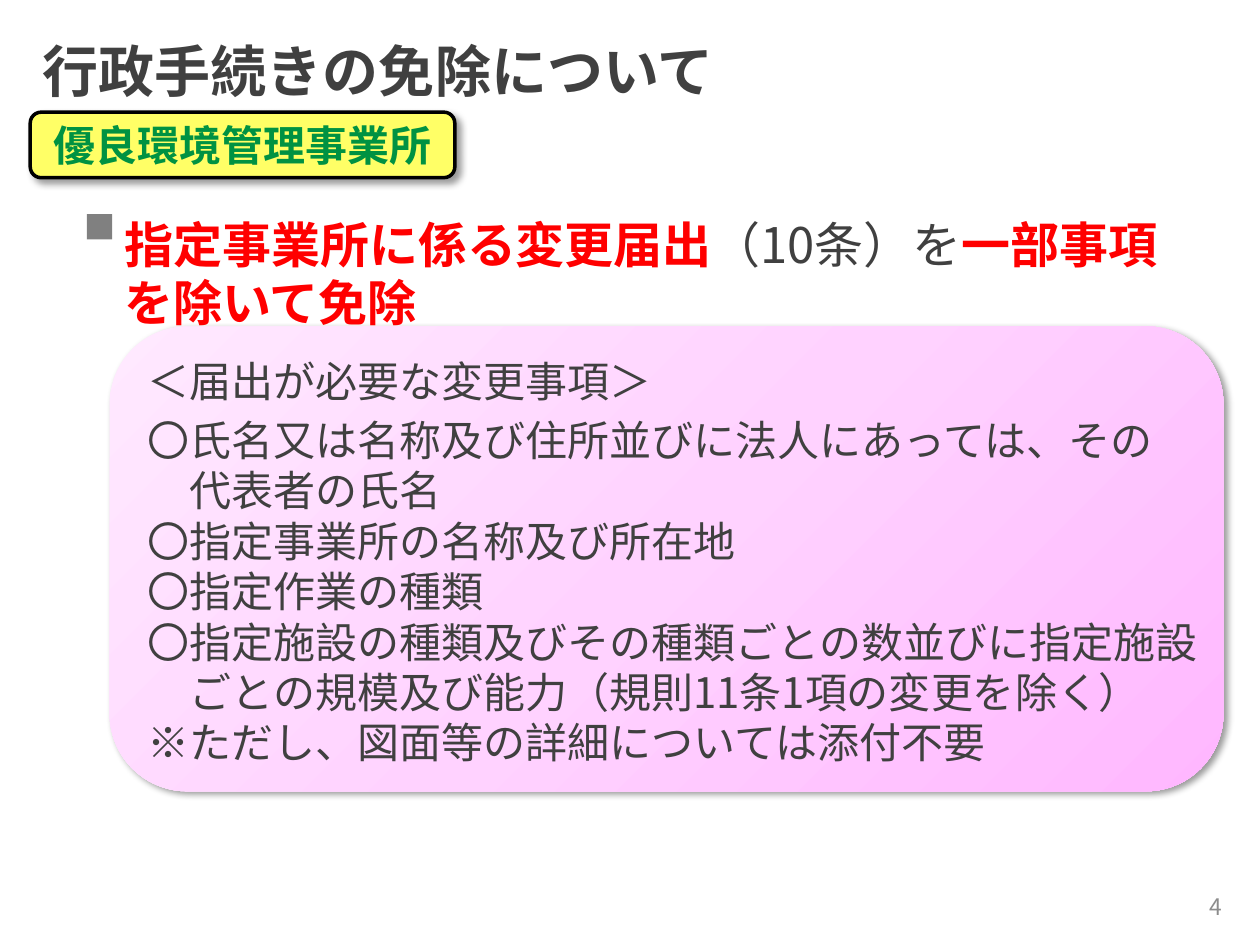
from pptx import Presentation
from pptx import util as u
from pptx.dml.color import RGBColor
from pptx.enum import shapes, text
from pptx.oxml import parse_xml
from pptx.oxml.ns import nsdecls, qn

FACE = "Noto Sans CJK JP"
HUE = {"ink": "404040", "red": "FF0000", "green": "009242", "gray": "808080",
       "pale": "8C8C8C", "gold": "FFFF66", "black": "000000"}
GRAD = [(0, "FFB7FF"), (50, "FFD2FF"), (100, "FFE9FF")]
LEAD = 1.2  # line pitch as a share of the type size
HANG = u.Pt(24)  # one full-width character

NEEDS = [  # (line, carries on from the line above)
    ("〇氏名又は名称及び住所並びに法人にあっては、その", False),
    ("代表者の氏名", True),
    ("〇指定事業所の名称及び所在地", False),
    ("〇指定作業の種類", False),
    ("〇指定施設の種類及びその種類ごとの数並びに指定施設", False),
    ("ごとの規模及び能力（規則11条1項の変更を除く）", True),
    ("※ただし、図面等の詳細については添付不要", False),
]


def rgb(name):
    return RGBColor.from_string(HUE[name])


def place(shape, box):
    for key, val in zip(("left", "top", "width", "height"), box):
        setattr(shape, key, u.Inches(val))


def frame(shape, anchor=text.MSO_ANCHOR.TOP):
    tf = shape.text_frame
    look = {"word_wrap": True, "auto_size": text.MSO_AUTO_SIZE.NONE,
            "vertical_anchor": anchor,
            "margin_left": u.Inches(0.1), "margin_right": u.Inches(0.1),
            "margin_top": u.Inches(0.05), "margin_bottom": u.Inches(0.05)}
    for key, val in look.items():
        setattr(tf, key, val)
    return tf


def write(para, runs, size, align=text.PP_ALIGN.LEFT):
    """Fill a paragraph with (words, colour, bold) runs."""
    look = {"alignment": align, "line_spacing": u.Pt(round(size * LEAD, 1)),
            "space_before": u.Pt(0), "space_after": u.Pt(0)}
    for key, val in look.items():
        setattr(para, key, val)
    for words, hue, bold in runs:
        run = para.add_run()
        run.text = words
        for key, val in {"size": u.Pt(size), "bold": bold, "name": FACE}.items():
            setattr(run.font, key, val)
        run.font.color.rgb = rgb(hue)
        latin = run.font._element.find(qn("a:latin"))
        latin.addnext(parse_xml(f'<a:ea {nsdecls("a")} typeface="{FACE}"/>'))


def label(slide, box, runs, size, **more):
    shape = slide.shapes.add_textbox(0, 0, 0, 0)
    place(shape, box)
    write(frame(shape).paragraphs[0], runs, size, **more)


def block(slide, kind, box, fill, edge=None, shade=False):
    shape = slide.shapes.add_shape(kind, 0, 0, 0, 0)
    place(shape, box)
    shape.fill.solid()
    shape.fill.fore_color.rgb = rgb(fill)
    if edge:
        shape.line.color.rgb = rgb(edge)
        shape.line.width = u.Pt(2)
    else:
        shape.line.fill.background()
    shape.shadow.inherit = False
    if shade:
        shape._element.spPr.find(qn("a:effectLst")).append(parse_xml(
            f'<a:outerShdw {nsdecls("a")} blurRad="{u.Pt(4)}" dist="{u.Pt(3)}" '
            'dir="2700000" algn="tl" rotWithShape="0"><a:srgbClr val="000000">'
            '<a:alpha val="40000"/></a:srgbClr></a:outerShdw>'))
    return shape


def head(slide, box):
    shape = slide.shapes.title
    place(shape, box)
    write(frame(shape).paragraphs[0], [("行政手続きの免除について", "ink", True)], 32)


def badge(slide, box):
    shape = block(slide, shapes.MSO_SHAPE.ROUNDED_RECTANGLE, box, "gold", "black", True)
    tf = frame(shape, text.MSO_ANCHOR.MIDDLE)
    write(tf.paragraphs[0], [("優良環境管理事業所", "green", True)], 24,
          align=text.PP_ALIGN.CENTER)


def point(slide, box):
    x, y, w, h = box
    block(slide, shapes.MSO_SHAPE.RECTANGLE, (x, y + 0.05, 0.2, 0.2), "gray")
    label(slide, (x + 0.2, y, w - 0.2, h),
          [("指定事業所に係る変更届出", "red", True), ("（10条）を", "ink", False),
           ("一部事項を除いて免除", "red", True)], 28)


def panel(slide, box):
    x, y, w, h = box
    card = block(slide, shapes.MSO_SHAPE.ROUNDED_RECTANGLE, box, "gold", shade=True)
    # Radial gradient from the lower right corner
    stops = "".join(f'<a:gs pos="{pos * 1000}"><a:srgbClr val="{hue}"/></a:gs>'
                    for pos, hue in GRAD)
    props = card._element.spPr
    props.replace(props.find(qn("a:solidFill")), parse_xml(
        f'<a:gradFill {nsdecls("a")} rotWithShape="1"><a:gsLst>{stops}</a:gsLst>'
        '<a:path path="circle"><a:fillToRect l="100000" t="100000"/></a:path>'
        '</a:gradFill>'))
    # Heading and list
    label(slide, (x + 0.2, y + 0.18, 4.58, 0.5),
          [("＜届出が必要な変更事項＞", "ink", False)], 24)
    body = slide.placeholders[1]
    place(body, (x + 0.2, y + 0.65, w, h - 0.76))
    props.getparent().addnext(body._element)  # list in front of the card
    tf = frame(body)
    for i, (words, more) in enumerate(NEEDS):
        para = tf.add_paragraph() if i else tf.paragraphs[0]
        fmt = para._p.get_or_add_pPr()
        fmt.set("marL", str(HANG))
        fmt.set("indent", str(0 if more else -HANG))
        fmt.append(parse_xml(f'<a:buNone {nsdecls("a")}/>'))
        write(para, [(words, "ink", False)], 24)


def main():
    prs = Presentation()
    prs.slide_width, prs.slide_height = u.Inches(10), u.Inches(7.5)
    slide = prs.slides.add_slide(prs.slide_layouts[1])
    panel(slide, (0.87, 2.59, 8.84, 3.69))
    head(slide, (0.24, 0.24, 6.33, 0.62))
    badge(slide, (0.24, 0.89, 3.37, 0.52))
    point(slide, (0.69, 1.65, 8.69, 1.04))
    # Page number
    label(slide, (7.55, 7.04, 2.25, 0.4), [("4", "pale", False)], 13,
          align=text.PP_ALIGN.RIGHT)
    prs.save("out.pptx")


if __name__ == "__main__":
    main()
